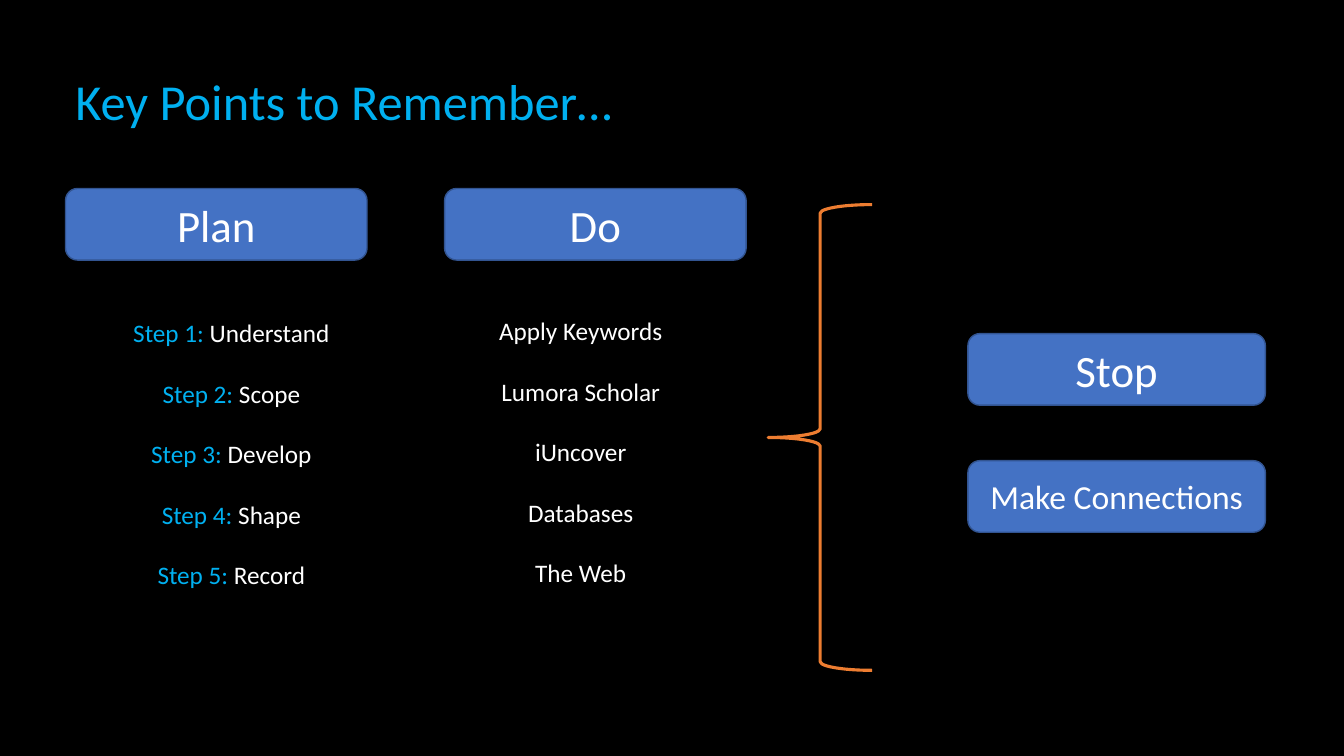
from dataclasses import dataclass

from pptx import Presentation
from pptx.dml.color import RGBColor
from pptx.enum.shapes import MSO_SHAPE
from pptx.enum.text import MSO_ANCHOR, MSO_AUTO_SIZE, PP_ALIGN
from pptx.slide import Slide
from pptx.text.text import TextFrame, _Paragraph
from pptx.util import Inches, Pt

ROUND, BRACE = MSO_SHAPE.ROUNDED_RECTANGLE, MSO_SHAPE.LEFT_BRACE
LEFT, CENTER = PP_ALIGN.LEFT, PP_ALIGN.CENTER
MIDDLE = MSO_ANCHOR.MIDDLE
GROW = MSO_AUTO_SIZE.SHAPE_TO_FIT_TEXT

BLACK = RGBColor(0x00, 0x00, 0x00)
WHITE = RGBColor(0xFF, 0xFF, 0xFF)
CYAN = RGBColor(0x00, 0xB0, 0xF0)
BLUE = RGBColor(0x44, 0x72, 0xC4)
NAVY = RGBColor(0x32, 0x54, 0x91)
ORANGE = RGBColor(0xED, 0x7D, 0x31)
FONT = "Calibri"


@dataclass
class Button:
    text: str
    left: float
    top: float
    width: float
    size: int = 32


@dataclass
class Column:
    left: float
    top: float
    width: float
    items: list[tuple[str, str]]


BUTTONS = [
    Button("Plan", 0.65, 1.87, 2.99),
    Button("Do", 4.41, 1.87, 2.99),
    Button("Stop", 9.6, 3.31, 2.95),
    Button("Make Connections", 9.6, 4.57, 2.95, 24),
]
STEPS = ["Understand", "Scope", "Develop", "Shape", "Record"]
TOOLS = ["Apply Keywords", "Lumora Scholar", "iUncover", "Databases", "The Web"]
COLUMNS = [
    Column(-1.04, 3.1, 6.67,
           [(f"Step {num}:", f" {step}") for num, step in enumerate(STEPS, 1)]),
    Column(4.13, 3.08, 3.26, [("", tool) for tool in TOOLS]),
]


def style(para: _Paragraph, size: int, color: RGBColor,
          align: PP_ALIGN = CENTER) -> None:
    para.alignment = align
    for run in para.runs:
        run.font.name = FONT
        run.font.size = Pt(size)
        run.font.color.rgb = color


def add_text(slide: Slide, left: float, top: float, width: float,
             height: float) -> TextFrame:
    box = slide.shapes.add_textbox(
        Inches(left), Inches(top), Inches(width), Inches(height))
    frame = box.text_frame
    frame.word_wrap = True
    frame.auto_size = GROW
    return frame


def add_button(slide: Slide, item: Button) -> None:
    shape = slide.shapes.add_shape(
        ROUND, Inches(item.left), Inches(item.top),
        Inches(item.width), Inches(0.71))
    shape.shadow.inherit = False
    shape.fill.solid()
    shape.fill.fore_color.rgb = BLUE
    shape.line.color.rgb = NAVY
    shape.line.width = Pt(1)
    frame = shape.text_frame
    frame.text = item.text
    frame.vertical_anchor = MIDDLE
    style(frame.paragraphs[0], item.size, WHITE)


def add_column(slide: Slide, col: Column) -> None:
    frame = add_text(slide, col.left, col.top, col.width, 2.83)
    for row, (label, text) in enumerate(col.items):
        para = frame.add_paragraph() if row else frame.paragraphs[0]
        para.text = label or text
        if label:
            para.add_run().text = text
        style(para, 18, WHITE)
        if label:
            para.runs[0].font.color.rgb = CYAN
        if row:
            para.space_before = Pt(21.6)


def add_brace(slide: Slide) -> None:
    brace = slide.shapes.add_shape(
        BRACE, Inches(7.62), Inches(2.03), Inches(1.03), Inches(4.62))
    brace.shadow.inherit = False
    brace.fill.background()
    brace.line.color.rgb = ORANGE
    brace.line.width = Pt(2.25)


def main() -> None:
    deck = Presentation()
    deck.slide_width, deck.slide_height = Inches(13.33), Inches(7.5)
    slide = deck.slides.add_slide(deck.slide_layouts[6])
    slide.background.fill.solid()
    slide.background.fill.fore_color.rgb = BLACK

    # Title
    title = add_text(slide, 0.65, 0.65, 5.93, 0.71)
    title.text = "Key Points to Remember…"
    style(title.paragraphs[0], 36, CYAN, LEFT)

    # Headings, lists and brace
    for item in BUTTONS:
        add_button(slide, item)
    for col in COLUMNS:
        add_column(slide, col)
    add_brace(slide)

    deck.save("out.pptx")


if __name__ == "__main__":
    main()
